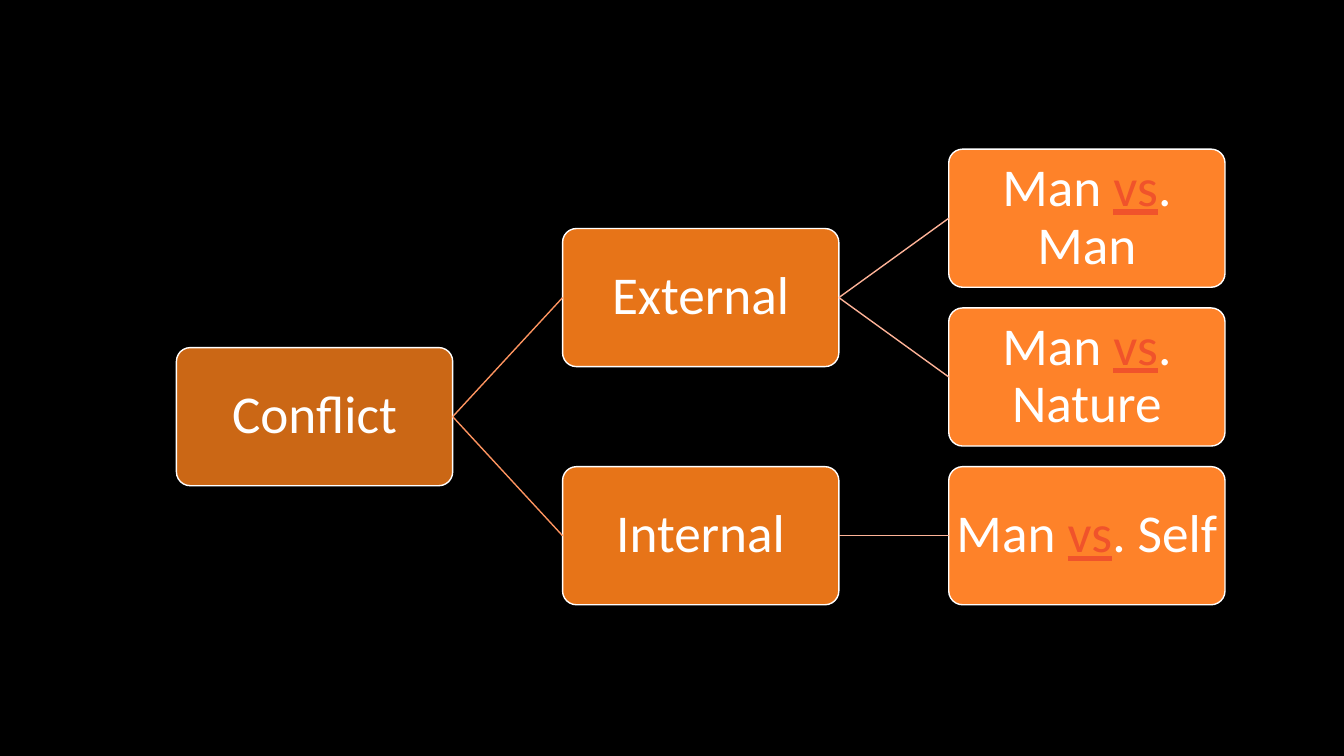
from lxml import etree
from pptx import Presentation
from pptx.dml.color import RGBColor
from pptx.enum.shapes import MSO_CONNECTOR, MSO_SHAPE
from pptx.enum.text import MSO_ANCHOR, PP_ALIGN
from pptx.oxml.ns import qn
from pptx.util import Inches, Pt

ROUNDED = MSO_SHAPE.ROUNDED_RECTANGLE
STRAIGHT = MSO_CONNECTOR.STRAIGHT
MIDDLE = MSO_ANCHOR.MIDDLE
CENTER = PP_ALIGN.CENTER
LEFT_SIDE, RIGHT_SIDE = 1, 3

THEME = {
    "font": "Calibri",
    "size": Pt(38),
    "line": Pt(1),
    "background": RGBColor.from_string("000000"),
    "text": RGBColor.from_string("FFFFFF"),
    "accent": RGBColor.from_string("F0532B"),
    "levels": [RGBColor.from_string(c) for c in ("CB6715", "E77418", "FE8229")],
    "links": [RGBColor.from_string(c) for c in ("FE9460", "FEB398")],
}

LEFT, TOP = 1.75, 1.48
BOX_W, BOX_H = 2.74, 1.37
COL_STEP, ROW_STEP = 3.83, 1.575

# name, parent, level, row (parents sit midway between their children), runs
NODES = [
    ("conflict", None, 0, 1.25, ["Conflict"]),
    ("external", "conflict", 1, 0.5, ["External"]),
    ("man", "external", 2, 0, ["Man ", "vs", ". Man"]),
    ("nature", "external", 2, 1, ["Man ", "vs", ". Nature"]),
    ("internal", "conflict", 1, 2, ["Internal"]),
    ("self", "internal", 2, 2, ["Man ", "vs", ". Self"]),
]

prs = Presentation()
prs.slide_width, prs.slide_height = Inches(13.33), Inches(7.5)
s = prs.slides.add_slide(prs.slide_layouts[6])
s.background.fill.solid()
s.background.fill.fore_color.rgb = THEME["background"]

boxes = {}
for name, parent, level, row, runs in NODES:
    sp = s.shapes.add_shape(ROUNDED, Inches(LEFT + level * COL_STEP),
                            Inches(TOP + row * ROW_STEP), Inches(BOX_W), Inches(BOX_H))
    boxes[name] = sp
    sp.adjustments[0] = 0.1
    sp.shadow.inherit = False
    sp.fill.solid()
    sp.fill.fore_color.rgb = THEME["levels"][level]
    sp.line.color.rgb = THEME["text"]
    sp.line.width = THEME["line"]

    tf = sp.text_frame
    tf.word_wrap = True
    tf.vertical_anchor = MIDDLE
    tf.margin_left = tf.margin_right = Inches(0.02)
    tf.margin_top = tf.margin_bottom = Inches(0.03)
    p = tf.paragraphs[0]
    p.alignment = CENTER
    p.line_spacing = 0.9
    for text in runs:
        r = p.add_run()
        r.text = text
        r.font.name = THEME["font"]
        r.font.size = THEME["size"]
        r.font.color.rgb = THEME["text"]
        if text == "vs":
            r.font.color.rgb = THEME["accent"]
            r.font.underline = True

    if parent:
        link = s.shapes.add_connector(STRAIGHT, 0, 0, 0, 0)
        link.begin_connect(boxes[parent], RIGHT_SIDE)
        link.end_connect(sp, LEFT_SIDE)
        link.line.color.rgb = THEME["links"][level - 1]
        link.line.width = THEME["line"]
        etree.SubElement(link._element.spPr, qn("a:effectLst"))

prs.save("out.pptx")
